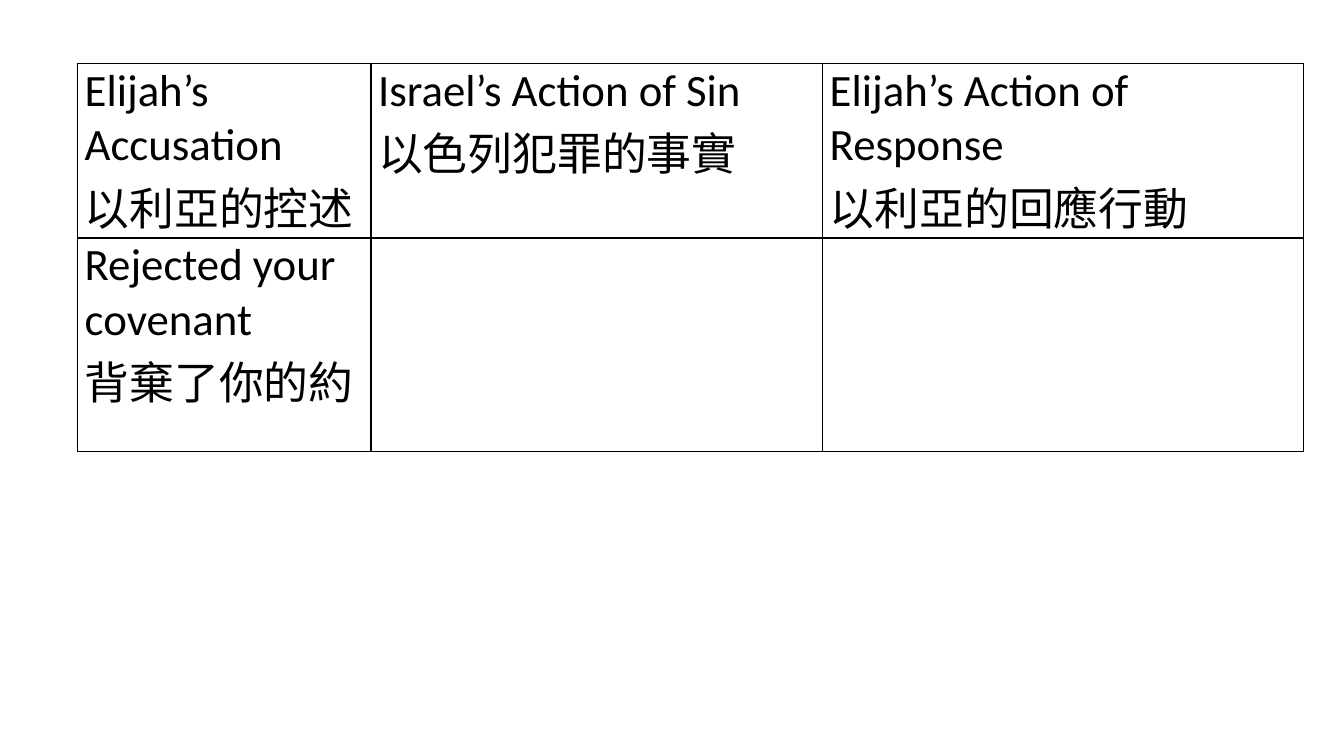
from lxml import etree
from pptx import Presentation
from pptx import util as u
from pptx.dml.color import RGBColor
from pptx.oxml.ns import qn

INK = {"text": "000000", "line": "000000"}
FONT = "Calibri"
COLS = [2.91, 4.48, 4.77]
ROWS = [1.72, 2.12]
CELLS = [
    [("Elijah’s Accusation", "以利亞的控述"),
     ("Israel’s Action of Sin", "以色列犯罪的事實"),
     ("Elijah’s Action of Response", "以利亞的回應行動")],
    [("Rejected your covenant", "背棄了你的約"), (), ()],
]


def border(cell):
    props = cell._tc.get_or_add_tcPr()
    for at, side in enumerate(("lnL", "lnR", "lnT", "lnB")):
        line = etree.Element(qn("a:" + side), w=str(u.Pt(1)))
        fill = etree.SubElement(line, qn("a:solidFill"))
        etree.SubElement(fill, qn("a:srgbClr"), val=INK["line"])
        props.insert(at, line)


def write(cell, lines):
    cell.margin_left = cell.margin_right = u.Inches(0.07)
    cell.margin_top = cell.margin_bottom = 0
    frame = cell.text_frame
    for at, line in enumerate(lines):
        para = frame.add_paragraph() if at else frame.paragraphs[0]
        run = para.add_run()
        run.text = line
        run.font.name = FONT
        run.font.size = u.Pt(32)
        run.font.bold = False
        run.font.color.rgb = RGBColor.from_string(INK["text"])


def add_grid(slide, left, top):
    """Place the table of accusations with its top left corner at the given point."""
    box = [u.Inches(n) for n in (left, top, sum(COLS), sum(ROWS))]
    grid = slide.shapes.add_table(len(ROWS), len(COLS), *box).table
    grid.first_row = grid.horz_banding = False
    for col, width in zip(grid.columns, COLS):
        col.width = u.Inches(width)
    for row, height, texts in zip(grid.rows, ROWS, CELLS):
        row.height = u.Inches(height)
        for cell, lines in zip(row.cells, texts):
            cell.fill.background()
            border(cell)
            write(cell, lines)


def main():
    deck = Presentation()
    deck.slide_width, deck.slide_height = u.Inches(13.33), u.Inches(7.5)
    slide = deck.slides.add_slide(deck.slide_layouts[6])
    add_grid(slide, 0.77, 0.63)
    deck.save("out.pptx")


if __name__ == "__main__":
    main()
